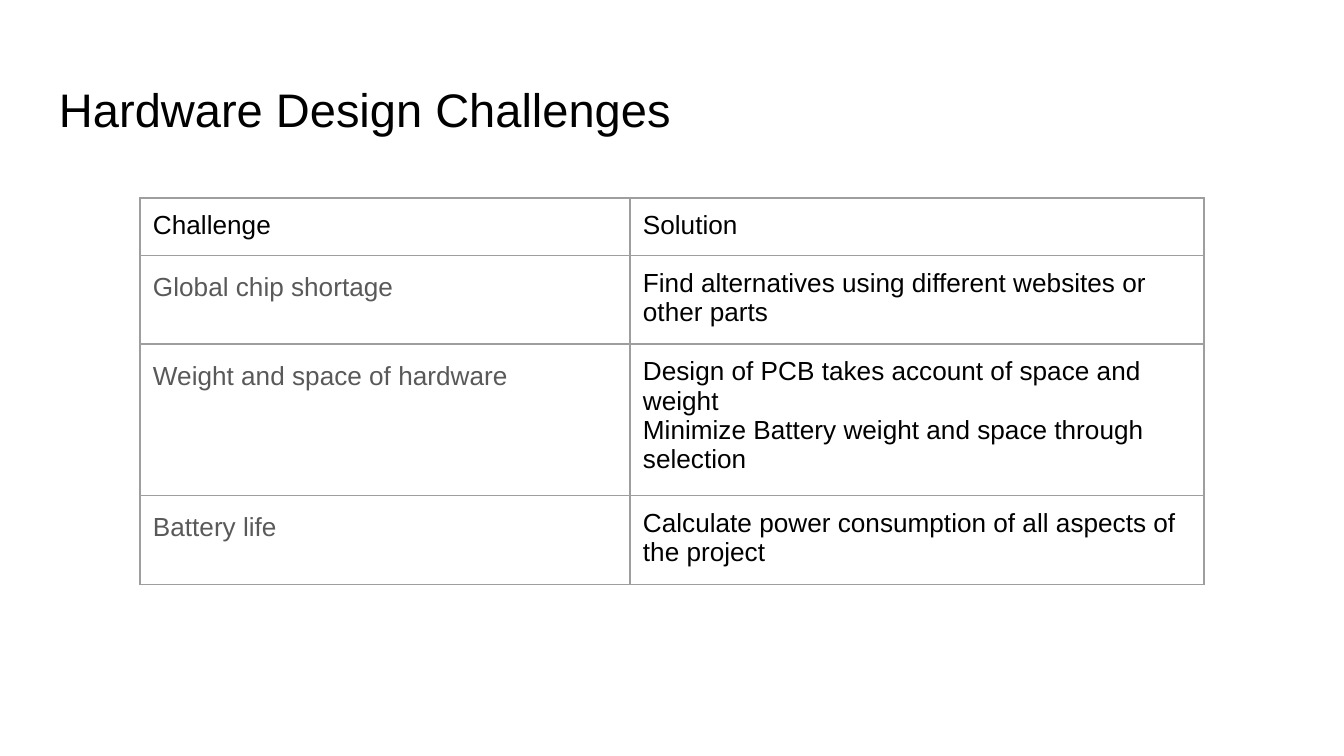
from lxml.etree import SubElement
from pptx import Presentation
from pptx.dml.color import RGBColor
from pptx.enum.text import MSO_ANCHOR
from pptx.oxml.ns import qn
from pptx.util import Pt

TITLE = "Hardware Design Challenges"
HEADER = ("Challenge", ["Solution"])
CHALLENGES = [
    ("Global chip shortage",
     ["Find alternatives using different websites or other parts"]),
    ("Weight and space of hardware",
     ["Design of PCB takes account of space and weight",
      "Minimize Battery weight and space through selection"]),
    ("Battery life",
     ["Calculate power consumption of all aspects of the project"]),
]
COLORS = {"text": "000000", "challenge": "595959", "border": "9E9E9E"}
FONT = "Arial"
SCALE = 914400 / 134.4
INSET = 13
COLUMN_WIDTHS = (490, 574)
ROW_HEIGHT = 56


def px(n):
    return round(n * SCALE)


def set_insets(target):
    for side in ("left", "top", "right", "bottom"):
        setattr(target, f"margin_{side}", px(INSET))


def write(tf, lines, size, color):
    tf.word_wrap = True
    tf.text = "\n".join(lines)
    for p in tf.paragraphs:
        for r in p.runs:
            r.font.name = FONT
            r.font.size = Pt(size)
            r.font.color.rgb = RGBColor.from_string(COLORS[color])


def add_borders(cell):
    tc_pr = cell._tc.get_or_add_tcPr()
    for i, tag in enumerate(("a:lnL", "a:lnR", "a:lnT", "a:lnB")):
        ln = SubElement(tc_pr, qn(tag), w=str(Pt(0.75)))
        fill = SubElement(ln, qn("a:solidFill"))
        SubElement(fill, qn("a:srgbClr"), val=COLORS["border"])
        tc_pr.remove(ln)
        tc_pr.insert(i, ln)  # borders come before the fill


def add_title(s):
    tf = s.shapes.add_textbox(px(46), px(66), px(1252), px(84)).text_frame
    set_insets(tf)
    tf.vertical_anchor = MSO_ANCHOR.BOTTOM
    write(tf, [TITLE], 25.2, "text")


def add_challenge_table(s):
    rows = [HEADER] + CHALLENGES
    table = s.shapes.add_table(
        len(rows), len(COLUMN_WIDTHS), px(140), px(198),
        px(sum(COLUMN_WIDTHS)), px(ROW_HEIGHT * len(rows))).table
    table.first_row = table.horz_banding = False
    for column, width in zip(table.columns, COLUMN_WIDTHS):
        column.width = px(width)
    for i, (challenge, solution) in enumerate(rows):
        table.rows[i].height = px(ROW_HEIGHT)
        for j, lines in enumerate(([challenge], solution)):
            cell = table.cell(i, j)
            is_challenge = i > 0 and j == 0
            cell.fill.background()
            set_insets(cell)
            add_borders(cell)
            write(cell.text_frame, lines, 14,
                  "challenge" if is_challenge else "text")
            if is_challenge:
                p = cell.text_frame.paragraphs[0]
                p.line_spacing = 1.15
                p.space_after = Pt(12)


prs = Presentation()
prs.slide_width, prs.slide_height = px(1344), px(756)
slide = prs.slides.add_slide(prs.slide_layouts[6])
add_title(slide)
add_challenge_table(slide)
prs.save("out.pptx")
